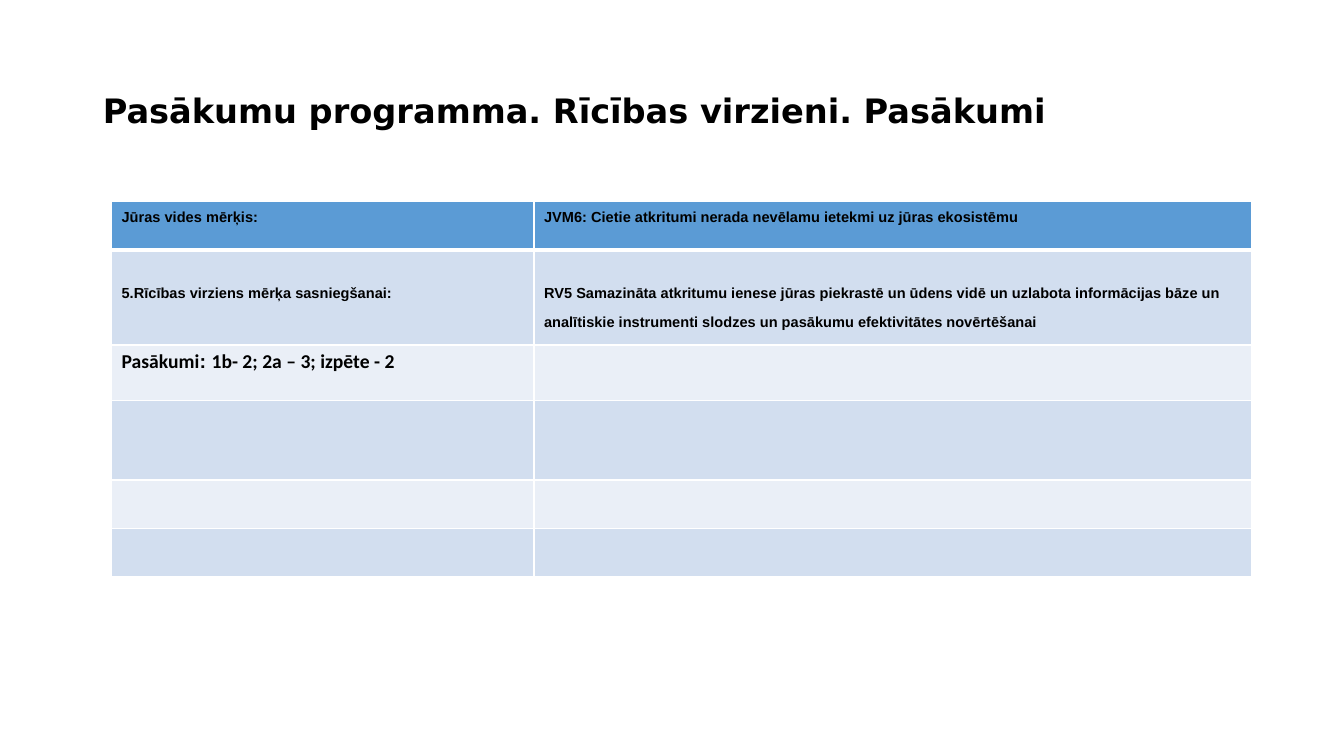
"""Builds a slide with a title and a table of marine measures."""
from dataclasses import dataclass

from lxml.etree import SubElement
from pptx import Presentation
from pptx.dml.color import RGBColor as Color
from pptx.enum.text import MSO_ANCHOR as Anchor, PP_ALIGN as Align
from pptx.oxml.ns import qn
from pptx.util import Inches, Pt


@dataclass(frozen=True)
class Theme:
    """Colours, fonts and type sizes of the slide."""
    ink: str = "000000"
    rule: str = "FFFFFF"
    header: str = "5B9BD5"
    bands: tuple = ("D2DEEF", "EAEFF7")
    title_font: str = "DejaVu Sans"
    label_font: str = "Arial"
    body_font: str = "Calibri"
    title_size: int = 24
    label_size: int = 18
    body_size: int = 14
    label_raise: int = 30000


def add_text(para, text, *, font, size, color, bold=True, baseline=0):
    """Add a formatted span of text to a paragraph."""
    span = para.add_run()
    span.text = text
    span.font.name = font
    span.font.size = Pt(size)
    span.font.bold = bold
    span.font.color.rgb = Color.from_string(color)
    if baseline:
        span.font._element.set("baseline", str(baseline))


class Page:
    """A slide with its theme, measured in shares of its size."""

    def __init__(self, deck, theme):
        """Add a title-only slide to the deck."""
        self.deck, self.theme = deck, theme
        self.slide = deck.slides.add_slide(deck.slide_layouts[5])

    def frame(self, left, top, width, height):
        """Turn shares of the slide into lengths."""
        across, down = self.deck.slide_width, self.deck.slide_height
        return (int(left * across), int(top * down),
                int(width * across), int(height * down))

    def title(self, text, box):
        """Place and format the title."""
        holder = self.slide.shapes.title
        holder.left, holder.top, holder.width, holder.height = self.frame(*box)
        holder.text_frame.vertical_anchor = Anchor.MIDDLE
        para = holder.text_frame.paragraphs[0]
        para.alignment = Align.LEFT
        para.line_spacing = 0.9
        add_text(para, text, font=self.theme.title_font,
                 size=self.theme.title_size, color=self.theme.ink)

    def border(self, cell, below):
        """Draw the four rules of a cell."""
        props = cell._tc.get_or_add_tcPr()
        for side, points in zip("LRTB", (1, 1, 1, below)):
            line = SubElement(props, qn(f"a:ln{side}"), w=str(Pt(points)))
            fill = SubElement(line, qn("a:solidFill"))
            SubElement(fill, qn("a:srgbClr"), val=self.theme.rule)

    def table(self, box, widths, heights, content):
        """Add a banded table; content maps (row, column) to spans."""
        grid = self.slide.shapes.add_table(
            len(heights), len(widths), *self.frame(*box)).table
        grid.horz_banding = False
        for column, width in zip(grid.columns, widths):
            column.width = Inches(width)
        for row, height in enumerate(heights):
            grid.rows[row].height = Inches(height)
            for column in range(len(widths)):
                cell = grid.cell(row, column)
                self.border(cell, 1 if row else 3)
                cell.fill.solid()
                cell.fill.fore_color.rgb = Color.from_string(
                    self.theme.bands[(row - 1) % 2] if row else self.theme.header)
                para = cell.text_frame.paragraphs[0]
                for text, style in content.get((row, column), ()):
                    add_text(para, text, color=self.theme.ink, **style)
        return grid


def main():
    """Build and save the slide."""
    deck = Presentation()
    deck.slide_width, deck.slide_height = Inches(13.33), Inches(7.5)
    theme = Theme()
    page = Page(deck, theme)
    page.title("Pasākumu programma. Rīcības virzieni. Pasākumi",
               (0.069, 0.053, 0.863, 0.193))

    label = dict(font=theme.label_font, size=theme.label_size,
                 baseline=theme.label_raise)
    body = dict(font=theme.body_font, size=theme.body_size)
    colon = dict(body, font=theme.label_font)
    content = {
        (0, 0): [("Jūras vides mērķis:", label)],
        (0, 1): [("JVM6: Cietie atkritumi nerada nevēlamu ietekmi uz jūras "
                  "ekosistēmu", label)],
        (1, 0): [("5.Rīcības virziens mērķa sasniegšanai:", label)],
        (1, 1): [("RV5 Samazināta atkritumu ienese jūras piekrastē un ūdens vidē "
                  "un uzlabota informācijas bāze un analītiskie instrumenti "
                  "slodzes un pasākumu efektivitātes novērtēšanai", label)],
        (2, 0): [("Pasākumi", body), (": ", colon),
                 ("1b- 2; 2a – 3; izpēte - 2", body)],
    }
    measures = page.table((0.083, 0.267, 0.848, 0.496), (4.19, 7.12),
                          (0.48, 0.93, 0.55, 0.79, 0.48, 0.48), content)
    for cell in measures.rows[1].cells:
        cell.margin_top = Inches(0.33)
    deck.save("out.pptx")


if __name__ == "__main__":
    main()
